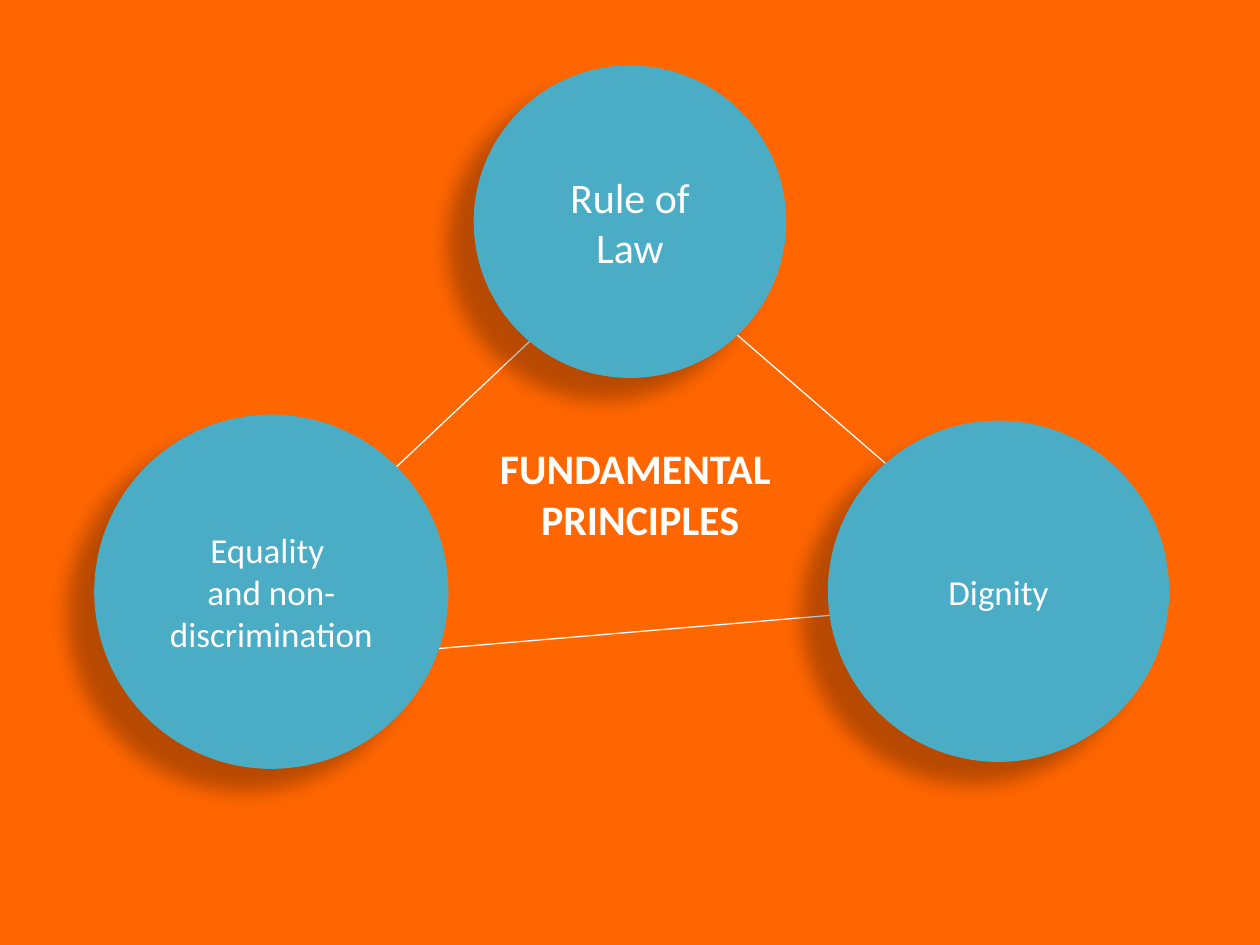
from dataclasses import dataclass

from lxml.etree import SubElement
from pptx import Presentation
from pptx.dml.color import RGBColor
from pptx.enum.shapes import MSO_CONNECTOR as Connector, MSO_SHAPE as Shape
from pptx.enum.text import MSO_ANCHOR as Anchor, MSO_AUTO_SIZE as AutoSize, PP_ALIGN as Align
from pptx.oxml.ns import qn
from pptx.util import Cm, Pt


@dataclass(frozen=True)
class Theme:
    background: RGBColor = RGBColor(0xFF, 0x66, 0x00)
    circle: RGBColor = RGBColor(0x4B, 0xAC, 0xC6)
    light: RGBColor = RGBColor(0xFF, 0xFF, 0xFF)
    shadow: str = "000000"
    font: str = "Calibri"
    large: Pt = Pt(24)
    normal: Pt = Pt(20)
    line: Pt = Pt(0.75)


THEME = Theme()

# Circles: centre x, centre y, diameter (cm), text size, lines
PRINCIPLES = [
    (20.13, 11.92, 6.88, THEME.normal, ["Dignity"]),
    (12.7, 4.47, 6.3, THEME.large, ["Rule of Law"]),
    (5.47, 11.93, 7.14, THEME.normal, ["Equality ", "and non-discrimination"]),
]

# Links between the circles: start x, y, end x, y (cm)
LINKS = [
    (5.69, 11.58, 11.91, 5.72),
    (13.31, 5.41, 20.09, 11.28),
    (5.69, 13.34, 20.09, 12.12),
]


def write_lines(shape, lines, size, bold=False):
    frame = shape.text_frame
    frame.word_wrap = True
    frame.auto_size = AutoSize.NONE
    frame.vertical_anchor = Anchor.MIDDLE
    for index, line in enumerate(lines):
        paragraph = frame.add_paragraph() if index else frame.paragraphs[0]
        paragraph.alignment = Align.CENTER
        run = paragraph.add_run()
        run.text = line
        run.font.name = THEME.font
        run.font.size = size
        run.font.bold = bold
        run.font.color.rgb = THEME.light


def add_shadow(shape):
    shape.shadow.inherit = False
    effects = shape._element.spPr.find(qn("a:effectLst"))
    shadow = SubElement(effects, qn("a:outerShdw"), blurRad=str(Pt(11.8)),
                        dist=str(Pt(19.7)), dir=str(141 * 60000),
                        algn="ctr", rotWithShape="0")
    color = SubElement(shadow, qn("a:srgbClr"), val=THEME.shadow)
    SubElement(color, qn("a:alpha"), val="28000")


def add_circle(slide, center_x, center_y, diameter, size, lines):
    radius = diameter / 2
    circle = slide.shapes.add_shape(
        Shape.OVAL, Cm(center_x - radius), Cm(center_y - radius), Cm(diameter), Cm(diameter))
    circle.fill.solid()
    circle.fill.fore_color.rgb = THEME.circle
    circle.line.fill.background()
    add_shadow(circle)
    write_lines(circle, lines, size)


def add_link(slide, *ends):
    link = slide.shapes.add_connector(Connector.STRAIGHT, *map(Cm, ends))
    link.line.color.rgb = THEME.light
    link.line.width = THEME.line
    SubElement(link._element.spPr, qn("a:effectLst"))


def set_title(slide, lines):
    title = slide.shapes.title
    title.left, title.top, title.width, title.height = Cm(8.51), Cm(7.4), Cm(8.79), Cm(5.08)
    write_lines(title, lines, THEME.large, bold=True)


def main():
    presentation = Presentation()
    presentation.slide_width, presentation.slide_height = Cm(25.4), Cm(19.05)
    slide = presentation.slides.add_slide(presentation.slide_layouts[5])

    # Background and central title
    slide.background.fill.solid()
    slide.background.fill.fore_color.rgb = THEME.background
    set_title(slide, ["FUNDAMENTAL ", "PRINCIPLES"])

    # Links lie behind the circles
    for link in LINKS:
        add_link(slide, *link)
    for principle in PRINCIPLES:
        add_circle(slide, *principle)

    presentation.save("out.pptx")


if __name__ == "__main__":
    main()
